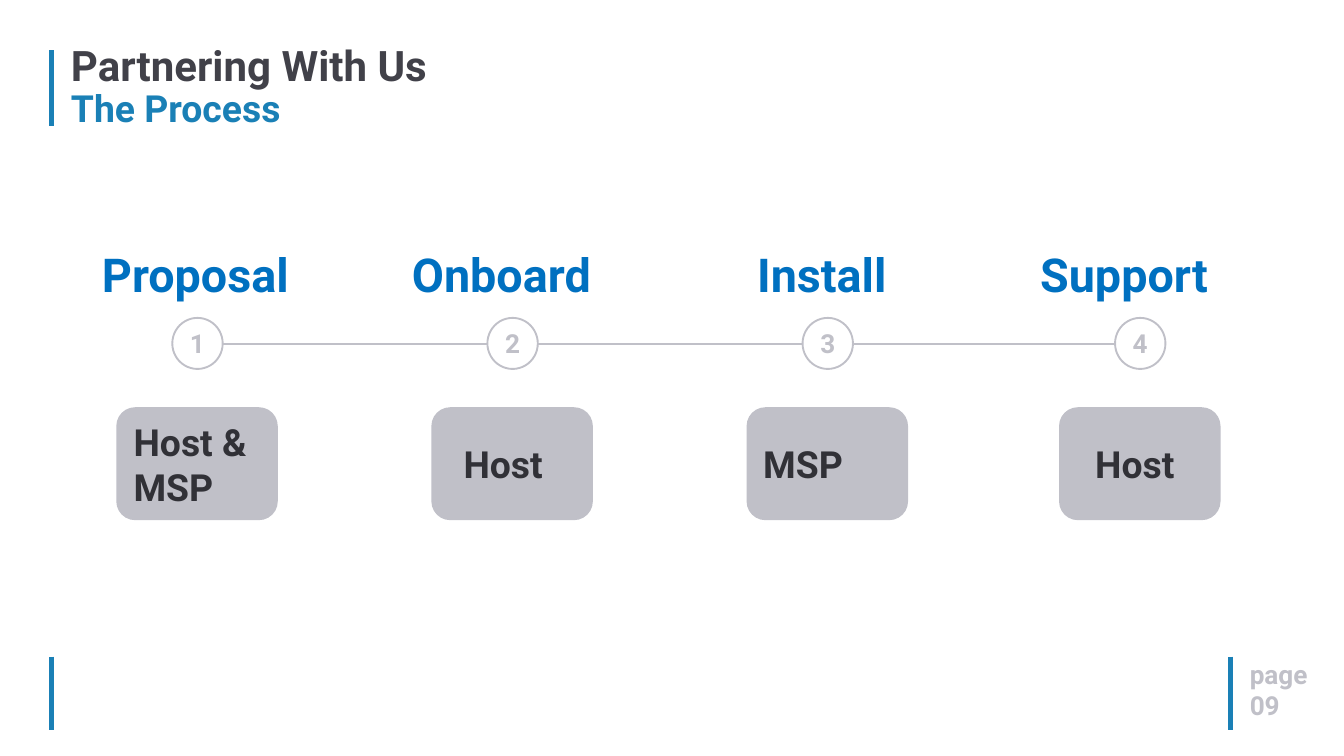
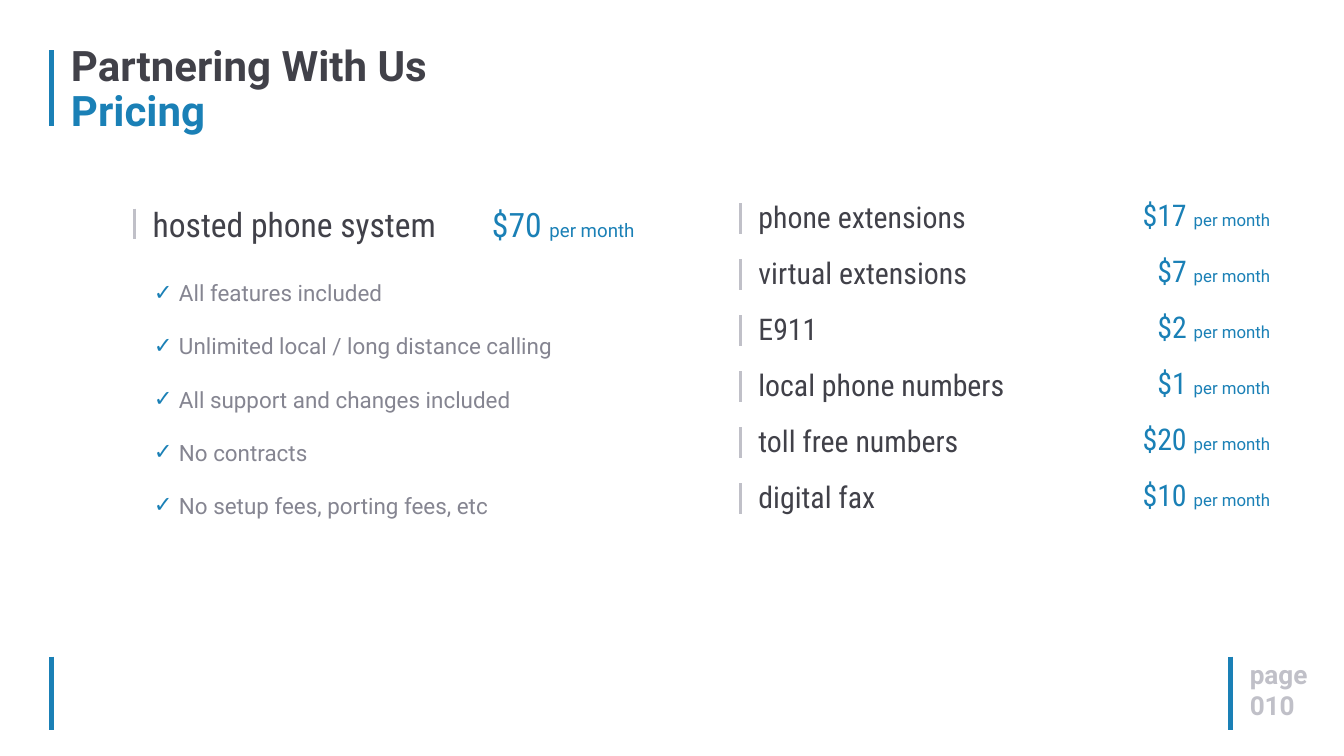
from lxml.etree import SubElement
from pptx import Presentation
from pptx.dml.color import RGBColor
from pptx.enum.shapes import MSO_CONNECTOR, MSO_SHAPE
from pptx.enum.text import MSO_ANCHOR, PP_ALIGN
from pptx.oxml.ns import qn
from pptx.util import Pt

BLUE = RGBColor(0x1A, 0x80, 0xB6)
BRIGHT = RGBColor(0x00, 0x70, 0xC0)
DARK = RGBColor(0x41, 0x41, 0x49)
INK = RGBColor(0x31, 0x31, 0x37)
GRAY = RGBColor(0x85, 0x85, 0x91)
PALE = RGBColor(0xC0, 0xC0, 0xC8)
WHITE = RGBColor(0xFF, 0xFF, 0xFF)
SANS = "Roboto"
SLIM = "Roboto Condensed"


def style(run, size, color, font=SANS, bold=False):
    run.font.size = Pt(size)
    run.font.color.rgb = color
    run.font.name = font
    run.font.bold = bold


def write(slide, box, text, size, color, font=SANS, bold=False):
    frame = slide.shapes.add_textbox(*map(Pt, box)).text_frame
    frame.word_wrap = True
    frame.text = text
    for par in frame.paragraphs:
        for run in par.runs:
            style(run, size, color, font, bold)
    return frame


def rule(slide, start, end, color, width):
    line = slide.shapes.add_connector(
        MSO_CONNECTOR.STRAIGHT, *map(Pt, start + end))
    line.line.color.rgb = color
    line.line.width = Pt(width)
    SubElement(line._element.spPr, qn("a:effectLst"))


def shape(slide, kind, box, fill, edge=None):
    item = slide.shapes.add_shape(kind, *map(Pt, box))
    item.shadow.inherit = False
    item.fill.solid()
    item.fill.fore_color.rgb = fill
    if edge is None:
        item.line.fill.background()
    else:
        item.line.color.rgb = edge
        item.line.width = Pt(2)
    return item


def base(deck, topic, size, page):
    slide = deck.slides.add_slide(deck.slide_layouts[6])
    for x, top, end in ((55.5, 54, 135.5), (55.5, 703.5, 782),
                        (1318.5, 703.5, 782)):
        rule(slide, (x, top), (x, end), BLUE, 5)
    title = write(slide, (69, 44.6, 429, 102),
                  f"Partnering With Us\v{topic}", 45, DARK, bold=True)
    par = title.paragraphs[0]
    par.line_spacing = 0.9
    style(par.runs[1], size, BLUE, bold=True)
    write(slide, (1332, 702, 108, 75), f"page\n{page}", 28, PALE, bold=True)
    return slide


def step(slide, left, top, num, head, shift, owner, indent):
    write(slide, (left + shift, top, 231, 68), head, 50, BRIGHT, bold=True)
    disc = shape(slide, MSO_SHAPE.OVAL, (left + 60, top + 80.6, 54, 54.7),
                 WHITE, PALE)
    frame = disc.text_frame
    frame.text = str(num)
    frame.vertical_anchor = MSO_ANCHOR.MIDDLE
    par = frame.paragraphs[0]
    par.alignment = PP_ALIGN.CENTER
    style(par.runs[0], 28, PALE, bold=True)
    card = top + 176.3
    shape(slide, MSO_SHAPE.FLOWCHART_ALTERNATE_PROCESS,
          (left, card, 173, 121), PALE)
    label = write(slide, (left + indent, card, 164, 121), owner, 40, INK,
                  bold=True)
    label.vertical_anchor = MSO_ANCHOR.MIDDLE


def process(deck):
    slide = base(deck, "The Process", 40, "09")
    rule(slide, (237, 368.6), (1239, 368.6), PALE, 2)
    steps = (
        (124.6, "Proposal", -22.4, "Host &\nMSP", 11.5),
        (462.2, "Onboard", -28, "Host", 27.4),
        (799.9, "Install", 4.3, "MSP", 10.8),
        (1134.7, "Support", -27.3, "Host", 31.7),
    )
    for num, (left, *parts) in enumerate(steps, 1):
        step(slide, left, 260, num, *parts)


def offer(slide, left, top, name, cost, sizes, box, align=PP_ALIGN.LEFT):
    big, small = sizes
    shift, rise, width = box
    rule(slide, (left, top + 9), (left, top + 42), PALE, 3)
    write(slide, (left + 12.5, top, shift - 13, 48), name, big, DARK, SLIM)
    frame = write(slide, (left + shift, top - rise, width, 48),
                  f"{cost} ", big, BLUE, SLIM)
    par = frame.paragraphs[0]
    par.alignment = align
    unit = par.add_run()
    unit.text = "per month"
    style(unit, small, BLUE)


def checks(slide, box, lines):
    frame = write(slide, box, "\n".join(lines), 24, GRAY)
    for i, par in enumerate(frame.paragraphs):
        if i:
            par.space_before = Pt(28)
        props = par._p.get_or_add_pPr()
        props.set("marL", str(Pt(27)))
        props.set("indent", str(Pt(-27)))
        tint = SubElement(props, qn("a:buClr"))
        SubElement(tint, qn("a:srgbClr"), val=str(BLUE))
        SubElement(props, qn("a:buFont"), typeface=SANS)
        SubElement(props, qn("a:buChar"), char="✓")


def pricing(deck):
    slide = base(deck, "Pricing", 45, "010")
    offer(slide, 144, 214.6, "hosted phone system", "$70", (36, 20),
          (376, 0, 193))
    checks(slide, (157.7, 296, 490, 298), (
        "All features included",
        "Unlimited local / long distance calling",
        "All support and changes included",
        "No contracts",
        "No setup fees, porting fees, etc",
    ))
    extras = (
        ("phone extensions", "$17"),
        ("virtual extensions", "$7"),
        ("E911", "$2"),
        ("local phone numbers", "$1"),
        ("toll free numbers", "$20"),
        ("digital fax", "$10"),
    )
    for i, (name, cost) in enumerate(extras):
        offer(slide, 793, 209 + 60 * i, name, cost, (32, 18),
              (360, 2, 215), PP_ALIGN.RIGHT)


def main():
    deck = Presentation()
    deck.slide_width = Pt(1440)
    deck.slide_height = Pt(810)
    process(deck)
    pricing(deck)
    deck.save("out.pptx")


if __name__ == "__main__":
    main()
